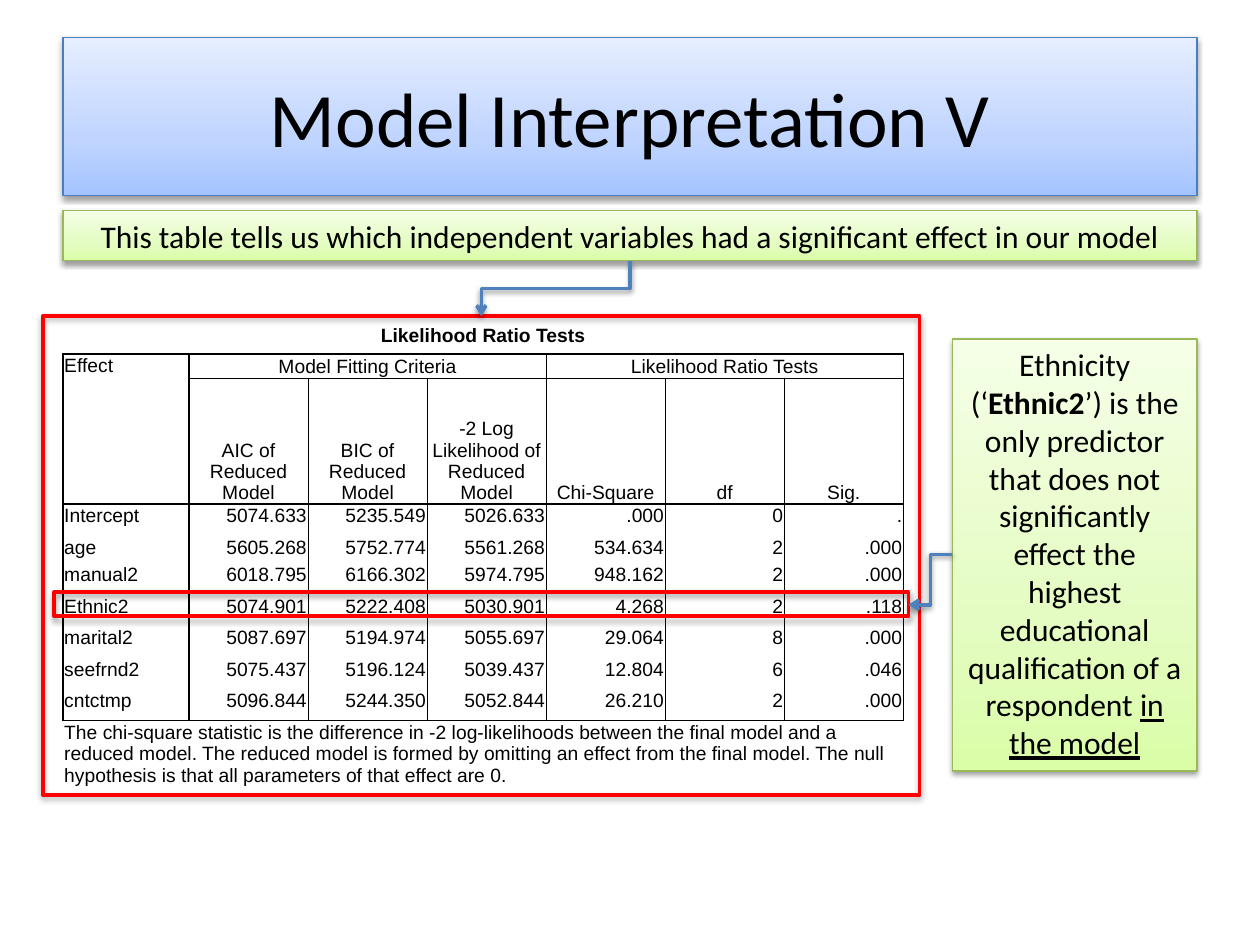
import pptx
import pptx.dml.color
import pptx.enum.shapes
import pptx.enum.text
import pptx.oxml
import pptx.oxml.ns
import pptx.util

Inches = pptx.util.Inches
Pt = pptx.util.Pt
ALIGN = pptx.enum.text.PP_ALIGN
ANCHOR = pptx.enum.text.MSO_ANCHOR
NS = pptx.oxml.ns.nsdecls("a")

BLUE = (("A4C4FF", "BFD4FF", "E6EEFF"), "4B7EBC")
GREEN = (("DAFDA7", "E4FCC2", "F5FFE7"), "98B955")
NO_STYLE = "{2D5ABB26-0587-4C30-8999-92F81FD0307C}"

CRITERIA = ["AIC of Reduced Model", "BIC of Reduced Model", "-2 Log Likelihood of Reduced Model",
            "Chi-Square", "df", "Sig."]
EFFECTS = [
    ["Intercept", "5074.633", "5235.549", "5026.633", ".000", "0", "."],
    ["age", "5605.268", "5752.774", "5561.268", "534.634", "2", ".000"],
    ["manual2", "6018.795", "6166.302", "5974.795", "948.162", "2", ".000"],
    ["Ethnic2", "5074.901", "5222.408", "5030.901", "4.268", "2", ".118"],
    ["marital2", "5087.697", "5194.974", "5055.697", "29.064", "8", ".000"],
    ["seefrnd2", "5075.437", "5196.124", "5039.437", "12.804", "6", ".046"],
    ["cntctmp", "5096.844", "5244.350", "5052.844", "26.210", "2", ".000"],
]
FOOTNOTE = ("The chi-square statistic is the difference in -2 log-likelihoods between the final model "
            "and a reduced model. The reduced model is formed by omitting an effect from the final "
            "model. The null hypothesis is that all parameters of that effect are 0.")
ROW_HEIGHTS = [0.3, 0.19, 1, 0.25, 0.22] + [0.25] * 5 + [0.77]
COLUMN_WIDTHS = [1] + [0.945] * 6
ROW_EDGES = {1: 1, 2: 0.5, 3: 1, 10: 1}
COLUMN_EDGES = [1, 1] + [0.5] * 5 + [1]


def color(value):
    """Return an RGB colour from a hex string."""
    return pptx.dml.color.RGBColor.from_string(value)


def add_xml(parent, xml):
    """Append a DrawingML fragment to an element."""
    parent.append(pptx.oxml.parse_xml(xml))


def add_shadow(s, alpha=38):
    """Give a shape or connector a soft shadow straight below it."""
    add_xml(s._element.spPr, f'<a:effectLst {NS}><a:outerShdw blurRad="{Pt(3.1)}" dist="{Pt(1.6)}" '
            f'dir="5400000" rotWithShape="0"><a:srgbClr val="000000"><a:alpha val="{alpha * 1000}"/>'
            '</a:srgbClr></a:outerShdw></a:effectLst>')


def add_rect(slide, box, line, width):
    """Add an outlined rectangle."""
    s = slide.shapes.add_shape(pptx.enum.shapes.MSO_SHAPE.RECTANGLE, *map(Inches, box))
    s.line.color.rgb = color(line)
    s.line.width = Pt(width)
    return s


def add_panel(slide, box, theme, runs, size, anchor=ANCHOR.TOP):
    """Add a gradient panel with centred text from (text, style) runs."""
    stops, line = theme
    s = add_rect(slide, box, line, 0.75)
    stop_xml = "".join(f'<a:gs pos="{pos * 1000}"><a:srgbClr val="{stop}"/></a:gs>'
                       for pos, stop in zip((0, 35, 100), stops))
    s._element.spPr.prstGeom.addnext(pptx.oxml.parse_xml(
        f'<a:gradFill {NS} rotWithShape="1"><a:gsLst>{stop_xml}</a:gsLst>'
        '<a:lin ang="16200000" scaled="0"/></a:gradFill>'))
    add_shadow(s)
    tf = s.text_frame
    tf.word_wrap = True
    tf.vertical_anchor = anchor
    p = tf.paragraphs[0]
    p.alignment = ALIGN.CENTER
    for text, style in runs:
        r = p.add_run()
        r.text = text
        r.font.name = "Calibri"
        r.font.size = Pt(size)
        r.font.color.rgb = color("000000")
        r.font.bold = style == "bold"
        r.font.underline = style == "underline"


def add_frame(slide, box):
    """Add an unfilled red highlight frame."""
    s = add_rect(slide, box, "FF0000", 2)
    s.fill.background()
    add_shadow(s, 35)


def add_elbow(slide, start, end, rotation=0):
    """Add a bent blue arrow, optionally turned by whole degrees."""
    s = slide.shapes.add_connector(pptx.enum.shapes.MSO_CONNECTOR.ELBOW, *map(Inches, start + end))
    s.line.color.rgb = color("4F81BD")
    s.line.width = Pt(2)
    add_xml(s.line._get_or_add_ln(), f'<a:tailEnd {NS} type="arrow"/>')
    if rotation:
        s._element.spPr.find(pptx.oxml.ns.qn("a:xfrm")).set("rot", str(rotation * 60000))
    add_shadow(s)


def set_borders(cell, row, col):
    """Rule a cell according to the table's row and column edges."""
    right, bottom = col + max(cell.span_width, 1), row + max(cell.span_height, 1)
    ruled = 1 <= row <= 9
    widths = {"L": COLUMN_EDGES[col] if ruled else None,
              "R": COLUMN_EDGES[right] if ruled else None,
              "T": ROW_EDGES.get(row), "B": ROW_EDGES.get(bottom)}
    for side, width in widths.items():
        paint = '<a:solidFill><a:srgbClr val="000000"/></a:solidFill>' if width else "<a:noFill/>"
        add_xml(cell._tc.get_or_add_tcPr(),
                f'<a:ln{side} {NS} w="{Pt(width or 0)}">{paint}</a:ln{side}>')


def fill_cell(cell, row, col, text):
    """Write, align and rule one table cell."""
    cell.margin_left = cell.margin_right = cell.margin_top = Inches(0.01)
    cell.margin_bottom = 0
    heading = row == 0 or (row < 3 and col > 0)
    if heading:
        cell.vertical_anchor = ANCHOR.MIDDLE if row == 0 else ANCHOR.BOTTOM
    cell.text = text
    p = cell.text_frame.paragraphs[0]
    p.alignment = ALIGN.CENTER if heading else ALIGN.RIGHT if col else ALIGN.LEFT
    font = p.runs[0].font
    font.name = "Arial"
    font.size = Pt(11)
    font.bold = row == 0
    font.color.rgb = color("000000")
    set_borders(cell, row, col)
    cell.fill.background()


def add_tests_table(slide, box):
    """Add the table of likelihood ratio tests."""
    rows = [["Likelihood Ratio Tests"],
            ["Effect", "Model Fitting Criteria", "", "", "Likelihood Ratio Tests"],
            [""] + CRITERIA, *EFFECTS, [FOOTNOTE]]
    table = slide.shapes.add_table(len(rows), len(COLUMN_WIDTHS), *map(Inches, box)).table
    table.first_row = table.horz_banding = False
    table._tbl.tblPr.find(pptx.oxml.ns.qn("a:tableStyleId")).text = NO_STYLE
    for row, height in zip(table.rows, ROW_HEIGHTS):
        row.height = Inches(height)
    for column, width in zip(table.columns, COLUMN_WIDTHS):
        column.width = Inches(width)
    for first, last in [((0, 0), (0, 6)), ((1, 0), (2, 0)), ((1, 1), (1, 3)),
                        ((1, 4), (1, 6)), ((10, 0), (10, 6))]:
        table.cell(*first).merge(table.cell(*last))
    for i, texts in enumerate(rows):
        for j, text in enumerate(texts):
            if text:
                fill_cell(table.cell(i, j), i, j, text)


def main():
    """Build and save the slide."""
    prs = pptx.Presentation()
    prs.slide_width, prs.slide_height = Inches(10), Inches(7.5)
    slide = prs.slides.add_slide(prs.slide_layouts[6])
    add_panel(slide, (0.5, 0.3, 9, 1.25), BLUE, [("Model Interpretation V", "")], 44, ANCHOR.MIDDLE)
    add_tests_table(slide, (0.5, 2.51, 6.67, 3.98))
    add_panel(slide, (0.5, 1.67, 9, 0.4), GREEN, [
        ("This table tells us which independent variables had a significant effect in our model", "")], 18)
    add_frame(slide, (0.34, 2.51, 6.96, 3.8))
    add_panel(slide, (7.56, 2.69, 1.94, 3.43), GREEN, [
        ("Ethnicity (‘", ""), ("Ethnic2", "bold"),
        ("’) is the only predictor that does not significantly effect the highest educational "
         "qualification of a respondent ", ""), ("in the model", "underline")], 18)
    add_frame(slide, (0.43, 4.7, 6.78, 0.19))
    add_elbow(slide, (7.56, 4.4), (7.21, 4.8))
    add_elbow(slide, (4.19, 1.7), (4.63, 2.88), 90)
    prs.save("out.pptx")


if __name__ == "__main__":
    main()
